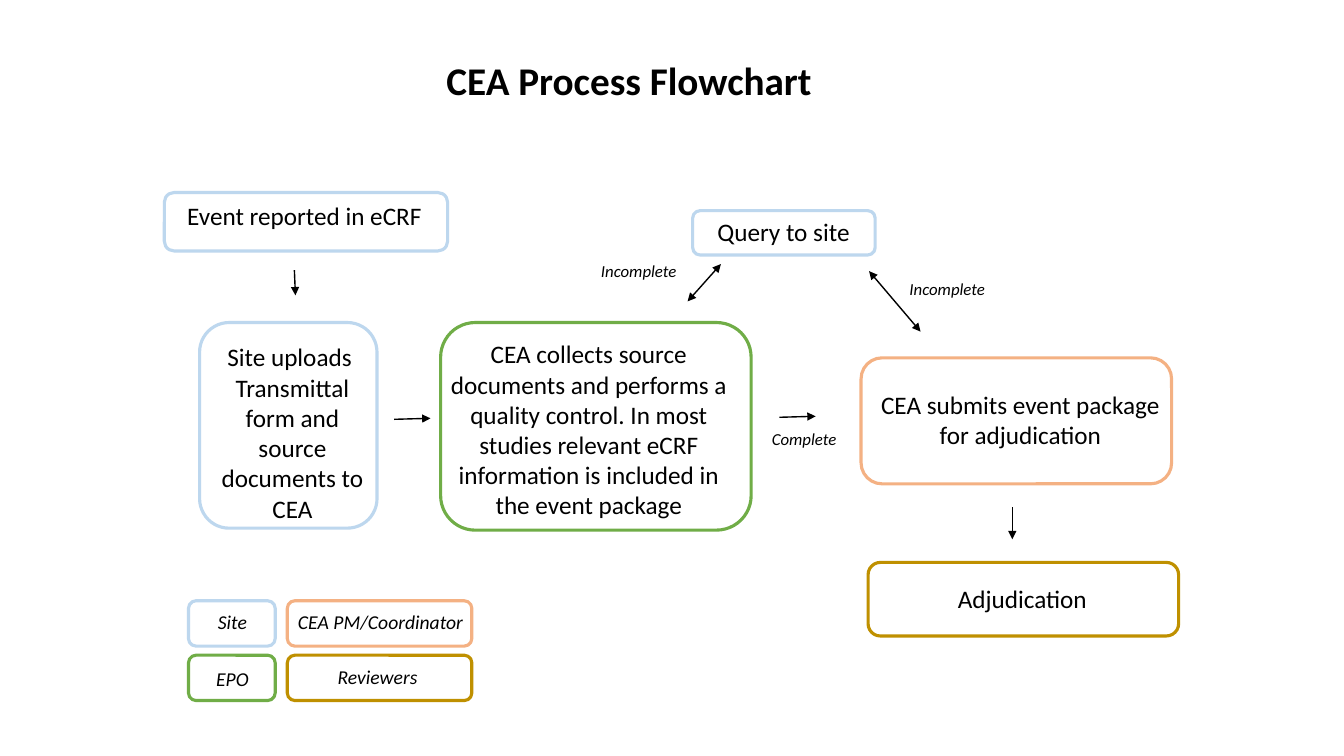
from lxml import etree
from pptx import Presentation
from pptx.dml.color import RGBColor
from pptx.enum.shapes import MSO_CONNECTOR, MSO_SHAPE
from pptx.enum.text import MSO_AUTO_SIZE, PP_ALIGN
from pptx.oxml.ns import qn
from pptx.util import Inches, Pt

ROUNDED = MSO_SHAPE.ROUNDED_RECTANGLE
STRAIGHT = MSO_CONNECTOR.STRAIGHT
FIT_TEXT = MSO_AUTO_SIZE.SHAPE_TO_FIT_TEXT
CENTER = PP_ALIGN.CENTER
LEFT = PP_ALIGN.LEFT

FONT = "Calibri"
BLACK = "000000"
SITE = "BDD7EE"
EPO = "70AD47"
COORDINATOR = "F4B183"
REVIEWERS = "BF9000"

STEP_BOXES = [
    (1.63, 1.91, 2.81, 0.58, SITE),
    (1.98, 3.2, 1.76, 2.04, SITE),
    (4.37, 3.2, 3.08, 2.06, EPO),
    (6.87, 2.09, 1.81, 0.44, SITE),
    (8.54, 3.55, 3.08, 1.25, COORDINATOR),
    (8.61, 5.58, 3.08, 0.73, REVIEWERS),
]
STEP_TEXTS = [
    (1.52, 1.94, 3, 0.4, "Event reported in eCRF"),
    (1.99, 3.34, 1.82, 1.92,
     "Site uploads \nTransmittal form and source documents to CEA"),
    (4.34, 3.31, 3, 1.92,
     "CEA collects source documents and performs a quality control. "
     "In most studies relevant eCRF information is included in the event package"),
    (6.87, 2.1, 1.86, 0.4, "Query to site "),
    (8.62, 3.81, 3, 0.71, "CEA submits event package for adjudication"),
    (8.64, 5.74, 3, 0.4, "Adjudication"),
]
ARROW_LABELS = [
    (5.72, 2.54, "Incomplete"),
    (8.78, 2.72, "Incomplete"),
    (7.36, 4.2, "Complete"),
]
ARROWS = [
    (2.92, 2.68, 2.93, 2.93, False),
    (3.91, 4.16, 4.27, 4.15, False),
    (7.73, 4.14, 8.09, 4.13, False),
    (10.04, 5.03, 10.04, 5.35, False),
    (7.15, 2.62, 6.82, 2.99, True),
    (8.62, 2.69, 9.13, 3.29, True),
]
LEGEND_COLUMNS = [(1.87, 0.86), (2.85, 1.83)]
LEGEND_ROWS = [5.96, 6.5]
LEGEND = [
    (0, 0, SITE, 1.26, 6, "Site"),
    (1, 0, COORDINATOR, 2.73, 6, "CEA PM/Coordinator"),
    (0, 1, EPO, 1.26, 6.57, "EPO"),
    (1, 1, REVIEWERS, 2.7, 6.55, "Reviewers"),
]


def rgb(color):
    return RGBColor.from_string(color)


def add_box(s, x, y, w, h, color):
    sp = s.shapes.add_shape(ROUNDED, Inches(x), Inches(y), Inches(w), Inches(h))
    sp.shadow.inherit = False
    sp.fill.background()
    sp.line.color.rgb = rgb(color)
    sp.line.width = Pt(2.25)


def add_text(s, x, y, w, h, text, size=18, bold=False, italic=False, align=CENTER):
    sp = s.shapes.add_textbox(Inches(x), Inches(y), Inches(w), Inches(h))
    tf = sp.text_frame
    tf.word_wrap = True
    tf.auto_size = FIT_TEXT
    tf.text = text
    for p in tf.paragraphs:
        p.alignment = align
        for r in p.runs:
            r.font.name = FONT
            r.font.size = Pt(size)
            r.font.bold = bold
            r.font.italic = italic
            r.font.color.rgb = rgb(BLACK)


def add_arrow(s, x1, y1, x2, y2, both_ends):
    sp = s.shapes.add_connector(STRAIGHT, Inches(x1), Inches(y1), Inches(x2), Inches(y2))
    sp.line.color.rgb = rgb(BLACK)
    sp.line.width = Pt(1)
    ln = sp.line._get_or_add_ln()
    for end in ("a:headEnd", "a:tailEnd") if both_ends else ("a:tailEnd",):
        etree.SubElement(ln, qn(end), type="triangle")
    etree.SubElement(sp._element.spPr, qn("a:effectLst"))


def add_legend(s):
    for column, row, color, text_x, text_y, role in LEGEND:
        x, w = LEGEND_COLUMNS[column]
        add_box(s, x, LEGEND_ROWS[row], w, 0.45, color)
        add_text(s, text_x, text_y, 2.09, 0.34, role, size=14, italic=True)


def main():
    prs = Presentation()
    prs.slide_width = Inches(13.33)
    prs.slide_height = Inches(7.5)
    s = prs.slides.add_slide(prs.slide_layouts[6])
    add_text(s, 4.33, 0.51, 4.03, 0.57, "CEA Process Flowchart",
             size=28, bold=True, align=LEFT)
    for box in STEP_BOXES:
        add_box(s, *box)
    for step in STEP_TEXTS:
        add_text(s, *step)
    for arrow in ARROWS:
        add_arrow(s, *arrow)
    for x, y, label in ARROW_LABELS:
        add_text(s, x, y, 1.23, 0.3, label, size=12, italic=True)
    add_legend(s)
    prs.save("out.pptx")


if __name__ == "__main__":
    main()
